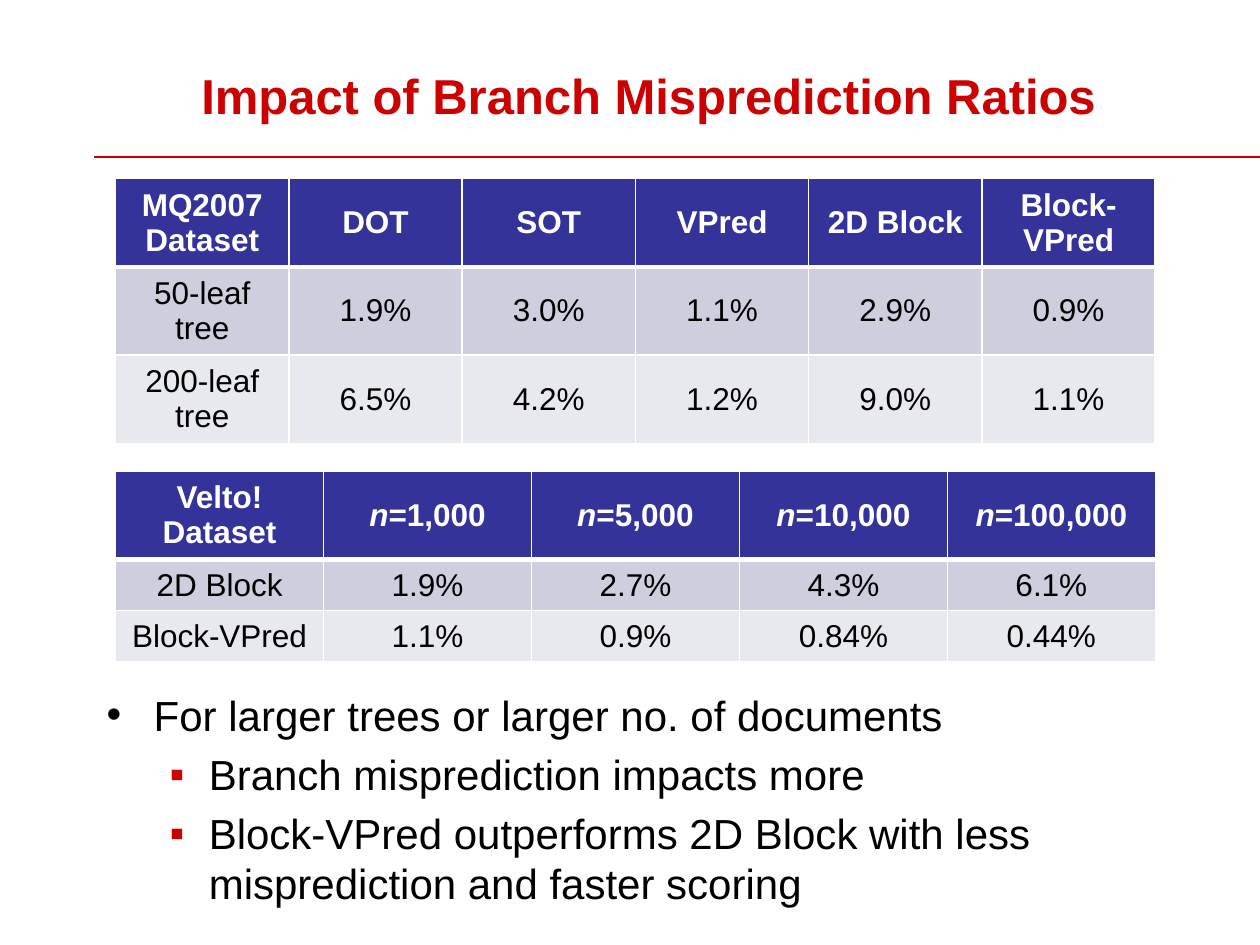
from lxml import etree
from pptx import Presentation
from pptx.dml.color import RGBColor
from pptx.enum.shapes import MSO_CONNECTOR
from pptx.enum.text import MSO_ANCHOR, PP_ALIGN
from pptx.oxml.ns import qn
from pptx.util import Cm, Pt

STRAIGHT = MSO_CONNECTOR.STRAIGHT
MIDDLE = MSO_ANCHOR.MIDDLE
TOP = MSO_ANCHOR.TOP
CENTER = PP_ALIGN.CENTER

FONT = "Arial"
RED = RGBColor(0xCC, 0x01, 0x01)
BLACK = RGBColor(0, 0, 0)
WHITE = RGBColor(0xFF, 0xFF, 0xFF)
NAVY = RGBColor(0x33, 0x33, 0x99)
ROW_FILLS = (RGBColor(0xCE, 0xCE, 0xDE), RGBColor(0xE8, 0xE8, 0xEF))

TABLE_LEFT = Cm(2.33)
TABLE_WIDTH = Cm(20.96)
ROW_HEIGHT = Cm(1.03)

MISPREDICTION_BY_TREE = [
    ["MQ2007 Dataset", "DOT", "SOT", "VPred", "2D Block", "Block-VPred"],
    ["50-leaf tree", "1.9%", "3.0%", "1.1%", "2.9%", "0.9%"],
    ["200-leaf tree", "6.5%", "4.2%", "1.2%", "9.0%", "1.1%"],
]
MISPREDICTION_BY_COUNT = [
    ["Velto! Dataset", "n=1,000", "n=5,000", "n=10,000", "n=100,000"],
    ["2D Block", "1.9%", "2.7%", "4.3%", "6.1%"],
    ["Block-VPred", "1.1%", "0.9%", "0.84%", "0.44%"],
]
FINDINGS = [
    (0, "For larger trees or larger no. of documents"),
    (1, "Branch misprediction impacts more"),
    (1, "Block-VPred outperforms 2D Block with less misprediction and faster scoring"),
]
BULLETS = [
    ("•", BLACK, Cm(0.95), Cm(-0.95)),
    ("▪", RED, Cm(2.06), Cm(-0.79)),
]


def add_span(para, text, size, color, bold=False, italic=False):
    span = para.add_run()
    span.text = text
    span.font.name = FONT
    span.font.size = Pt(size)
    span.font.color.rgb = color
    span.font.bold = bold
    span.font.italic = italic


def add_box(page, left, top, width, height, anchor):
    box = page.shapes.add_textbox(left, top, width, height)
    frame = box.text_frame
    frame.word_wrap = True
    frame.vertical_anchor = anchor
    return frame


def add_title(page, text):
    frame = add_box(page, Cm(3.81), Cm(1.06), Cm(20.32), Cm(1.7), MIDDLE)
    add_span(frame.paragraphs[0], text, 28, RED, bold=True)


def add_rule(page):
    rule = page.shapes.add_connector(STRAIGHT, Cm(1.9), Cm(3.17), Cm(25.4), Cm(3.17))
    rule.line.color.rgb = RED
    rule.line.width = Pt(1)
    etree.SubElement(rule._element.spPr, qn("a:effectLst"))


def set_border(cell, side, width):
    line = etree.SubElement(cell._tc.get_or_add_tcPr(), qn(f"a:ln{side}"), w=str(Pt(width)))
    fill = etree.SubElement(line, qn("a:solidFill"))
    etree.SubElement(fill, qn("a:srgbClr"), val=str(WHITE))


def style_cell(cell, row):
    widths = {"L": 1, "R": 1, "T": 3 if row == 1 else 1, "B": 3 if row == 0 else 1}
    for side, width in widths.items():
        set_border(cell, side, width)
    cell.fill.solid()
    cell.fill.fore_color.rgb = NAVY if row == 0 else ROW_FILLS[row - 1]
    cell.vertical_anchor = MIDDLE


def add_result_table(page, top, rows):
    table = page.shapes.add_table(
        len(rows), len(rows[0]), TABLE_LEFT, top, TABLE_WIDTH, ROW_HEIGHT * len(rows)
    ).table
    for row, values in enumerate(rows):
        header = row == 0
        color = WHITE if header else BLACK
        for column, text in enumerate(values):
            cell = table.cell(row, column)
            style_cell(cell, row)
            para = cell.text_frame.paragraphs[0]
            para.alignment = CENTER
            if text.startswith("n="):
                add_span(para, "n", 18, color, header, italic=True)
                text = text[1:]
            add_span(para, text, 18, color, header)


def set_bullet(para, level):
    symbol, color, margin, indent = BULLETS[level]
    para.level = level
    properties = para._p.get_or_add_pPr()
    properties.set("marL", str(margin))
    properties.set("indent", str(indent))
    bullet_color = etree.SubElement(properties, qn("a:buClr"))
    etree.SubElement(bullet_color, qn("a:srgbClr"), val=str(color))
    etree.SubElement(properties, qn("a:buFont"), typeface=FONT)
    etree.SubElement(properties, qn("a:buChar"), char=symbol)


def add_findings(page, findings):
    frame = add_box(page, Cm(1.9), Cm(13.77), Cm(22.22), Cm(3.6), TOP)
    for index, (level, text) in enumerate(findings):
        para = frame.add_paragraph() if index else frame.paragraphs[0]
        set_bullet(para, level)
        if index:
            para.space_before = Pt(5)
        add_span(para, text, 24, BLACK)


def main():
    deck = Presentation()
    deck.slide_width = Cm(25.4)
    deck.slide_height = Cm(19.05)
    page = deck.slides.add_slide(deck.slide_layouts[6])
    add_rule(page)
    add_title(page, "Impact of Branch Misprediction Ratios")
    add_findings(page, FINDINGS)
    add_result_table(page, Cm(3.6), MISPREDICTION_BY_TREE)
    add_result_table(page, Cm(9.5), MISPREDICTION_BY_COUNT)
    deck.save("out.pptx")


if __name__ == "__main__":
    main()
